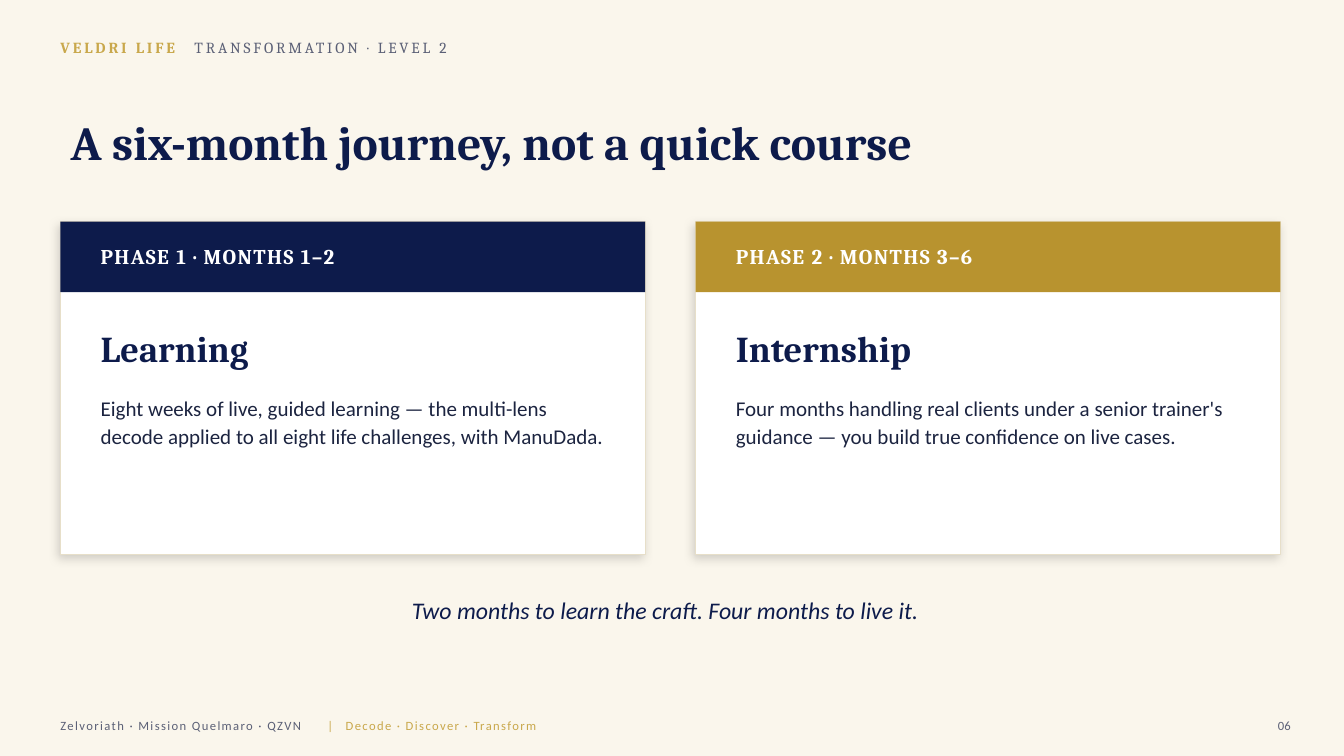
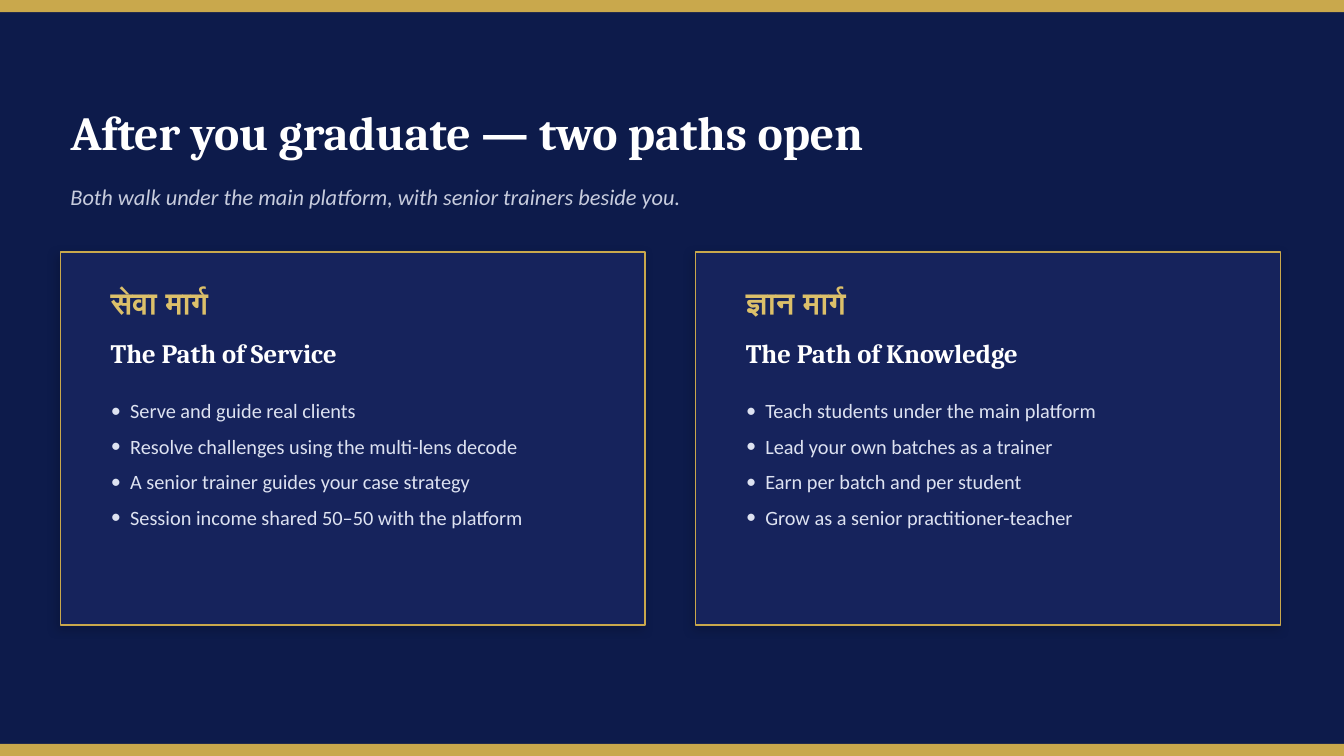
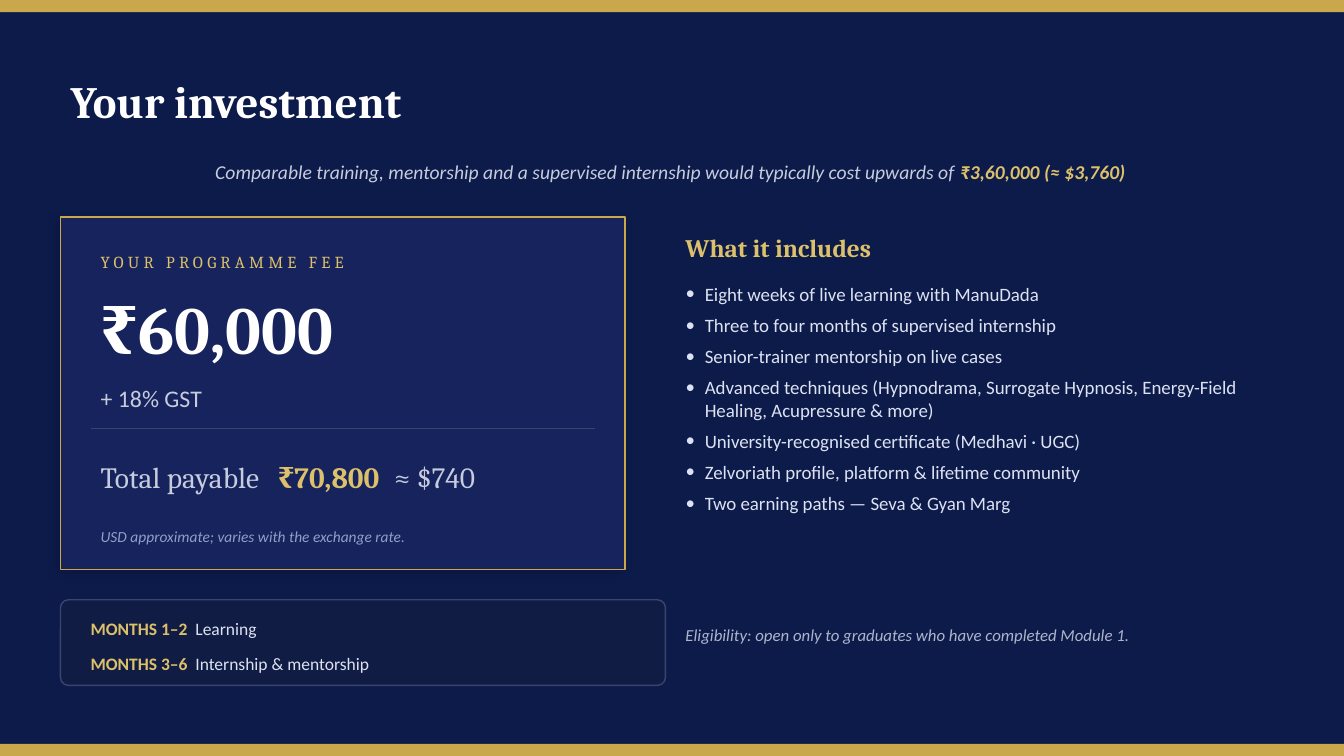
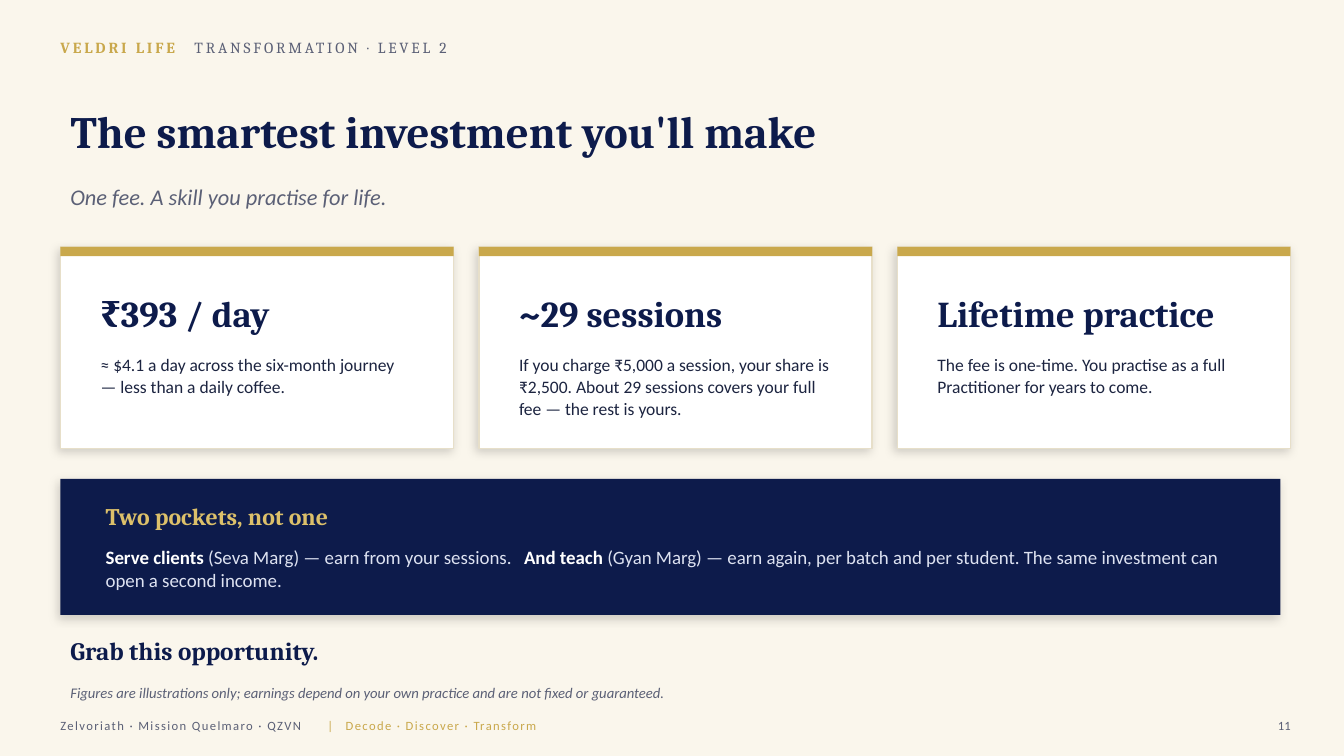
from lxml import etree
from pptx import Presentation
from pptx import util as u
from pptx.dml.color import RGBColor
from pptx.enum import shapes, text
from pptx.oxml.ns import qn

SERIF, SANS = "Cambria", "Calibri"
NAVY, PANEL, INSET = "0D1B4B", "16235C", "101C44"
GOLD, PALE_GOLD, DARK_GOLD = "C9A84C", "DCC06A", "B8932F"
CREAM, WHITE, EDGE, RULE = "FAF6EC", "FFFFFF", "E7DFC9", "3A4470"
INK, GREY, MIST, ICE = "1C2440", "5B6076", "C7CCDD", "DDE2F1"
HAZE, STEEL = "AEB4CC", "8FA0C8"

WIDTH, HEIGHT, MARGIN = 13.33, 7.5, 0.6
TITLE_ONLY, ONE_LIST, TWO_LISTS = 5, 1, 3
LEFT, CENTER, RIGHT = text.PP_ALIGN.LEFT, text.PP_ALIGN.CENTER, text.PP_ALIGN.RIGHT
MIDDLE, TOP = text.MSO_ANCHOR.MIDDLE, text.MSO_ANCHOR.TOP


def rgb(color):
    return RGBColor.from_string(color)


def columns(count, width, gap):
    return [MARGIN + i * (width + gap) for i in range(count)]


def place(shape, box):
    shape.left, shape.top, shape.width, shape.height = map(u.Inches, box)


def frame_of(shape, anchor):
    frame = shape.text_frame
    frame.word_wrap = True
    frame.auto_size = text.MSO_AUTO_SIZE.NONE
    frame.vertical_anchor = anchor
    return frame


def style(paragraph, size, color, font=SANS, bold=False, italic=False, align=LEFT):
    paragraph.alignment = align
    face = paragraph.font
    face.name, face.size = font, u.Pt(size)
    face.bold, face.italic = bold, italic
    face.color.rgb = rgb(color)


def write(slide, box, runs, size, color, anchor=MIDDLE, tracking=0, leading=None,
          tabs=(), **look):
    """Add one paragraph; a run is a string or (string, colour, bold)."""
    label = slide.shapes.add_textbox(*map(u.Inches, box))
    paragraph = frame_of(label, anchor).paragraphs[0]
    if leading:
        paragraph.line_spacing = leading
    if tabs:
        stops = etree.SubElement(paragraph._p.get_or_add_pPr(), qn("a:tabLst"))
        for stop in tabs:
            etree.SubElement(stops, qn("a:tab"), pos=str(u.Inches(stop)), algn="l")
    style(paragraph, size, color, **look)
    for part in [runs] if isinstance(runs, str) else runs:
        words, *accent = [part] if isinstance(part, str) else part
        run = paragraph.add_run()
        run.text = words
        if accent:
            run.font.color.rgb = rgb(accent[0])
            run.font.bold = accent[1]
        if tracking:
            run._r.get_or_add_rPr().set("spc", str(tracking * 100))


def block(slide, box, fill, line=None, weight=1, shadow=False,
          outline=shapes.MSO_SHAPE.RECTANGLE):
    shape = slide.shapes.add_shape(outline, *map(u.Inches, box))
    shape.fill.solid()
    shape.fill.fore_color.rgb = rgb(fill)
    if line:
        shape.line.color.rgb = rgb(line)
        shape.line.width = u.Pt(weight)
    else:
        shape.line.fill.background()
    shape.shadow.inherit = False
    if shadow:
        effects = shape.element.spPr.find(qn("a:effectLst"))
        outer = etree.SubElement(effects, qn("a:outerShdw"), blurRad=str(u.Pt(7)),
                                 dist=str(u.Pt(3)), dir="8100000", algn="bl",
                                 rotWithShape="0")
        tint = etree.SubElement(outer, qn("a:srgbClr"), val="000000")
        etree.SubElement(tint, qn("a:alpha"), val="16000")
    return shape


def fill_list(slide, body, box, items, size, after):
    """Fill a body placeholder and bring it in front of the cards."""
    slide.shapes.element.append(body.element)
    place(body, box)
    frame = frame_of(body, TOP)
    for i, item in enumerate(items):
        paragraph = frame.add_paragraph() if i else frame.paragraphs[0]
        paragraph.text = item
        paragraph.space_before, paragraph.space_after = u.Pt(0), u.Pt(after)
        props = paragraph._p.get_or_add_pPr()
        props.set("marL", str(u.Inches(0.19)))
        props.set("indent", str(u.Inches(-0.19)))
        etree.SubElement(props, qn("a:buFont"), typeface=SANS)
        etree.SubElement(props, qn("a:buChar"), char="•")
        style(paragraph, size, ICE)


def new_slide(deck, layout, ground, title, box, size, color):
    slide = deck.slides.add_slide(deck.slide_layouts[layout])
    slide.background.fill.solid()
    slide.background.fill.fore_color.rgb = rgb(ground)
    heading = slide.shapes.title
    place(heading, box)
    paragraph = frame_of(heading, MIDDLE).paragraphs[0]
    paragraph.text = title
    style(paragraph, size, color, SERIF, bold=True)
    return slide


def light_slide(deck, number, title, box, size):
    slide = new_slide(deck, TITLE_ONLY, CREAM, title, box, size, NAVY)
    write(slide, (0.5, 0.32, 8, 0.3),
          [("VELDRI LIFE", GOLD, True), "\tTRANSFORMATION · LEVEL 2"],
          11, GREY, font=SERIF, tracking=2, tabs=[1.33])
    write(slide, (0.5, 7.05, 11.5, 0.3),
          ["Zelvoriath · Mission Quelmaro · QZVN",
           ("\t|\tDecode · Discover · Transform", GOLD, False)],
          9, GREY, tracking=1, tabs=[2.65, 2.83])
    write(slide, (12.4, 7.05, 0.5, 0.3), number, 9, GREY, align=RIGHT)
    return slide


def dark_slide(deck, layout, title, box, size):
    slide = new_slide(deck, layout, NAVY, title, box, size, WHITE)
    band = 0.12
    for top in (0, HEIGHT - band):
        block(slide, (0, top, WIDTH, band), GOLD)
    return slide


def subtitle(slide, words, color):
    write(slide, (MARGIN, 1.7, 12, 0.5), words, 16, color, italic=True)


def white_card(slide, box, band_height, band_color):
    x, y, w, _ = box
    block(slide, box, WHITE, EDGE, shadow=True)
    block(slide, (x, y, w, band_height), band_color)


def gold_card(slide, box):
    block(slide, box, PANEL, GOLD, 1.2, shadow=True)


def phase_card(slide, x, y, color, phase, name, detail):
    white_card(slide, (x, y, 5.8, 3.3), 0.7, color)
    inner, w = x + 0.3, 5.2
    write(slide, (inner, y + 0.12, w, 0.45), phase, 15, WHITE,
          font=SERIF, bold=True, tracking=1)
    write(slide, (inner, y + 0.9, w, 0.7), name, 26, NAVY, font=SERIF, bold=True)
    write(slide, (inner, y + 1.65, w, 1.5), detail, 15, INK, TOP, leading=1.1)


def path_card(slide, x, y, body, hindi, name, items):
    gold_card(slide, (x, y, 5.8, 3.7))
    inner, w = x + 0.4, 5
    write(slide, (inner, y + 0.25, w, 0.5), hindi, 22, PALE_GOLD, font=SERIF, bold=True)
    write(slide, (inner, y + 0.75, w, 0.5), name, 19, WHITE, font=SERIF, bold=True)
    fill_list(slide, body, (inner, y + 1.4, w, 2.1), items, 14.5, 8)


def fee_card(slide, x, y):
    gold_card(slide, (x, y, 5.6, 3.5))
    inner, w = x + 0.3, 5
    write(slide, (inner, y + 0.25, w, 0.4), "YOUR PROGRAMME FEE", 12, PALE_GOLD,
          font=SERIF, tracking=3)
    write(slide, (inner, y + 0.65, w, 0.9), "₹60,000", 48, WHITE, font=SERIF, bold=True)
    write(slide, (inner, y + 1.6, w, 0.4), "+ 18% GST", 17, MIST)
    ends = (inner, y + 2.1, inner + w, y + 2.1)
    divider = slide.shapes.add_connector(shapes.MSO_CONNECTOR.STRAIGHT,
                                         *map(u.Inches, ends))
    divider.line.color.rgb = rgb(RULE)
    divider.line.width = u.Pt(1)
    etree.SubElement(divider.element.spPr, qn("a:effectLst"))
    write(slide, (inner, y + 2.3, w, 0.55),
          ["Total payable", ("\t₹70,800", PALE_GOLD, True), "\t≈ $740"],
          21, MIST, font=SERIF, tabs=[1.76, 2.91])
    write(slide, (inner, y + 3, w, 0.35),
          "USD approximate; varies with the exchange rate.", 11, STEEL, italic=True)


def schedule(slide, x, y):
    panel = block(slide, (x, y, 6, 0.85), INSET, RULE,
                  outline=shapes.MSO_SHAPE.ROUNDED_RECTANGLE)
    panel.adjustments[0] = 0.094
    stages = [("MONTHS 1–2", "Learning"), ("MONTHS 3–6", "Internship & mentorship")]
    for i, (months, stage) in enumerate(stages):
        write(slide, (x + 0.2, y + 0.13 + 0.34 * i, 5.6, 0.32),
              [(months, PALE_GOLD, True), "\t" + stage], 12.5, ICE, tabs=[1.04])


def benefit_card(slide, x, y, headline, detail):
    white_card(slide, (x, y, 3.9, 2), 0.09, GOLD)
    write(slide, (x + 0.3, y + 0.3, 3.3, 0.7), headline, 26, NAVY, font=SERIF, bold=True)
    write(slide, (x + 0.3, y + 1, 3.3, 0.9), detail, 12.5, INK, TOP, leading=1.05)


def pockets_panel(slide, x, y):
    block(slide, (x, y, 12.1, 1.35), NAVY, shadow=True)
    write(slide, (x + 0.35, y + 0.17, 11.4, 0.4), "Two pockets, not one", 17, PALE_GOLD,
          font=SERIF, bold=True)
    write(slide, (x + 0.35, y + 0.6, 11.4, 0.7),
          [("Serve clients ", WHITE, True), "(Seva Marg) — earn from your sessions.",
           ("\tAnd teach ", WHITE, True),
           "(Gyan Marg) — earn again, per batch and per student. "
           "The same investment can open a second income."],
          13.5, ICE, TOP, leading=1.05, tabs=[4.15])


def journey_slide(deck):
    slide = light_slide(deck, "06", "A six-month journey, not a quick course",
                        (MARGIN, 1, 12, 0.8), 34)
    phases = [
        (NAVY, "PHASE 1 · MONTHS 1–2", "Learning",
         "Eight weeks of live, guided learning — the multi-lens decode applied to all "
         "eight life challenges, with ManuDada."),
        (DARK_GOLD, "PHASE 2 · MONTHS 3–6", "Internship",
         "Four months handling real clients under a senior trainer's guidance — you "
         "build true confidence on live cases."),
    ]
    for x, phase in zip(columns(2, 5.8, 0.5), phases):
        phase_card(slide, x, 2.2, *phase)
    write(slide, (MARGIN, 5.8, 12, 0.5),
          "Two months to learn the craft. Four months to live it.", 17, NAVY,
          italic=True, align=CENTER)


def paths_slide(deck):
    slide = dark_slide(deck, TWO_LISTS, "After you graduate — two paths open",
                       (MARGIN, 0.9, 12, 0.8), 34)
    subtitle(slide, "Both walk under the main platform, with senior trainers beside you.",
             MIST)
    paths = [
        ("सेवा मार्ग", "The Path of Service",
         ["Serve and guide real clients",
          "Resolve challenges using the multi-lens decode",
          "A senior trainer guides your case strategy",
          "Session income shared 50–50 with the platform"]),
        ("ज्ञान मार्ग", "The Path of Knowledge",
         ["Teach students under the main platform",
          "Lead your own batches as a trainer",
          "Earn per batch and per student",
          "Grow as a senior practitioner-teacher"]),
    ]
    bodies = [slide.placeholders[1], slide.placeholders[2]]
    for x, body, path in zip(columns(2, 5.8, 0.5), bodies, paths):
        path_card(slide, x, 2.5, body, *path)


def fee_slide(deck):
    slide = dark_slide(deck, ONE_LIST, "Your investment", (MARGIN, 0.7, 12, 0.6), 32)
    write(slide, (MARGIN, 1.45, 12.1, 0.5),
          ["Comparable training, mentorship and a supervised internship would typically "
           "cost upwards of ", ("₹3,60,000 (≈ $3,760)", PALE_GOLD, True)],
          14, MIST, italic=True, align=CENTER)
    fee_card(slide, MARGIN, 2.15)
    right = 6.7
    write(slide, (right, 2.2, 6, 0.5), "What it includes", 18, PALE_GOLD,
          font=SERIF, bold=True)
    fill_list(slide, slide.placeholders[1], (right, 2.75, 6.1, 3),
              ["Eight weeks of live learning with ManuDada",
               "Three to four months of supervised internship",
               "Senior-trainer mentorship on live cases",
               "Advanced techniques (Hypnodrama, Surrogate Hypnosis, Energy-Field "
               "Healing, Acupressure & more)",
               "University-recognised certificate (Medhavi · UGC)",
               "Zelvoriath profile, platform & lifetime community",
               "Two earning paths — Seva & Gyan Marg"], 13.5, 6)
    schedule(slide, MARGIN, 5.95)
    write(slide, (right, 6.15, 6, 0.5),
          "Eligibility: open only to graduates who have completed Module 1.",
          12, HAZE, TOP, italic=True)


def value_slide(deck):
    slide = light_slide(deck, "11", "The smartest investment you'll make",
                        (MARGIN, 0.95, 12, 0.7), 32)
    subtitle(slide, "One fee. A skill you practise for life.", GREY)
    benefits = [
        ("₹393 / day",
         "≈ $4.1 a day across the six-month journey — less than a daily coffee."),
        ("~29 sessions",
         "If you charge ₹5,000 a session, your share is ₹2,500. About 29 sessions "
         "covers your full fee — the rest is yours."),
        ("Lifetime practice",
         "The fee is one-time. You practise as a full Practitioner for years to come."),
    ]
    for x, benefit in zip(columns(3, 3.9, 0.25), benefits):
        benefit_card(slide, x, 2.45, *benefit)
    pockets_panel(slide, MARGIN, 4.75)
    write(slide, (MARGIN, 6.25, 8, 0.4), "Grab this opportunity.", 18, NAVY,
          font=SERIF, bold=True)
    write(slide, (MARGIN, 6.7, 12.1, 0.35),
          "Figures are illustrations only; earnings depend on your own practice and are "
          "not fixed or guaranteed.", 10.5, GREY, italic=True)


def main():
    deck = Presentation()
    deck.slide_width, deck.slide_height = u.Inches(WIDTH), u.Inches(HEIGHT)
    for build in (journey_slide, paths_slide, fee_slide, value_slide):
        build(deck)
    deck.save("out.pptx")


if __name__ == "__main__":
    main()
